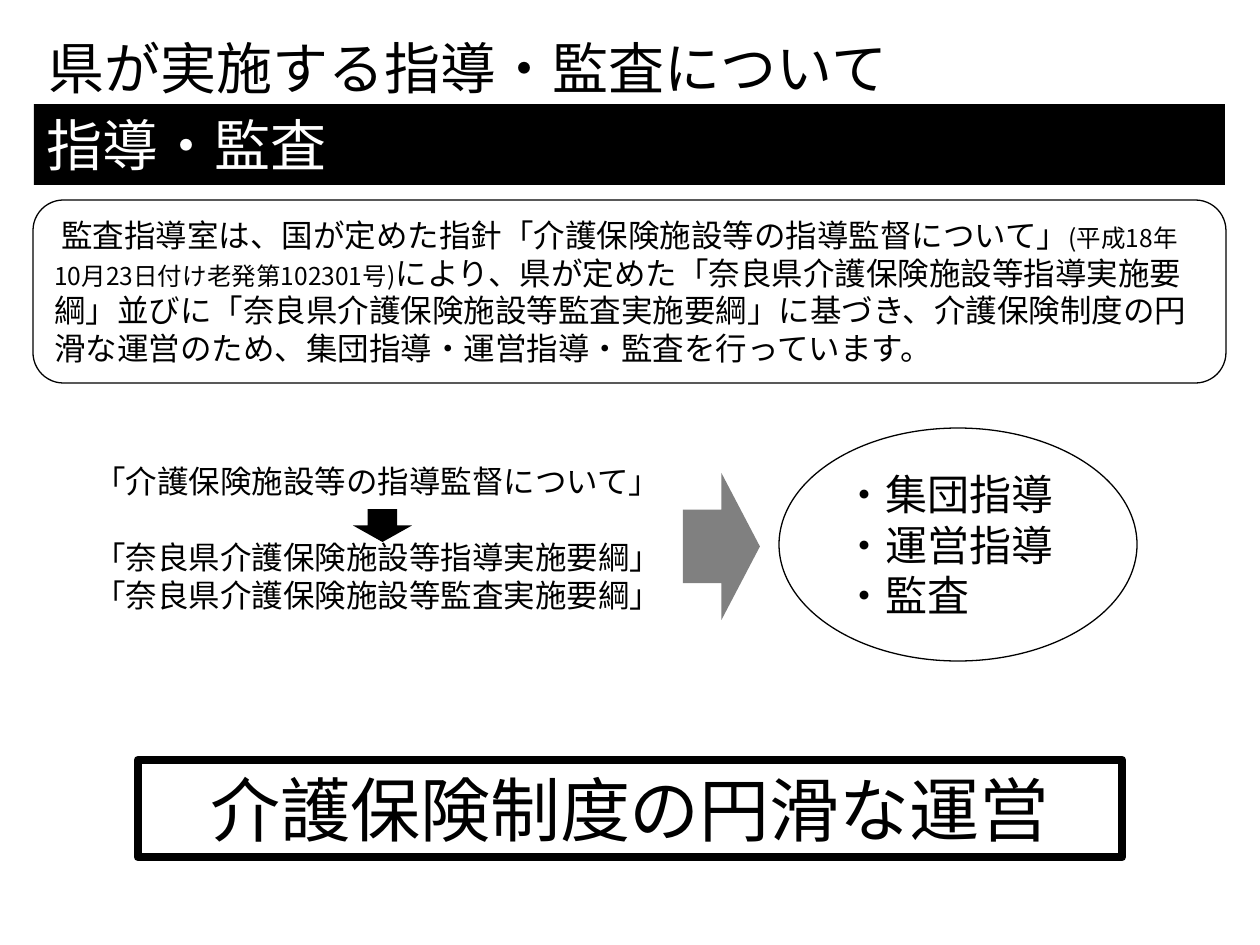
from lxml import etree
from pptx import Presentation
from pptx import util as u
from pptx.dml.color import RGBColor
from pptx.enum import shapes, text
from pptx.oxml.ns import qn

PX = u.Inches(1) / 126
FONT = "Noto Sans CJK JP"
BLACK, WHITE, GRAY = "000000", "FFFFFF", "808080"
KIND = shapes.MSO_SHAPE


def write(shape, lines, size, color=BLACK, anchor=text.MSO_ANCHOR.MIDDLE,
          align=text.PP_ALIGN.LEFT):
    """Fill a shape with paragraphs; each line is a list of (words, size) or a string."""
    frame = shape.text_frame
    frame.word_wrap = True
    frame.vertical_anchor = anchor
    for i, line in enumerate(lines):
        paragraph = frame.paragraphs[0] if i == 0 else frame.add_paragraph()
        paragraph.alignment = align
        for words, points in [(line, size)] if isinstance(line, str) else line:
            run = paragraph.add_run()
            run.text = words
            run.font.size = u.Pt(points)
            run.font.name = FONT
            run.font.color.rgb = RGBColor.from_string(color)
            etree.SubElement(run.font._element, qn("a:ea")).set("typeface", FONT)


def add_figure(kind, box, fill=None, line=None):
    """Add a preset shape; box is left, top, width, height in px, line is in points."""
    figure = slide.shapes.add_shape(kind, *(round(v * PX) for v in box))
    figure.shadow.inherit = False
    if fill:
        figure.fill.solid()
        figure.fill.fore_color.rgb = RGBColor.from_string(fill)
    else:
        figure.fill.background()
    if line:
        figure.line.color.rgb = RGBColor.from_string(BLACK)
        figure.line.width = u.Pt(line)
    else:
        figure.line.fill.background()
    return figure


prs = Presentation()
prs.slide_width, prs.slide_height = u.Inches(10), u.Inches(7.5)
slide = prs.slides.add_slide(prs.slide_layouts[5])

# Title
title = slide.shapes.title
title.left, title.top, title.width, title.height = (
    round(v * PX) for v in (36, 27, 1071, 80))
write(title, ["県が実施する指導・監査について"], 32)

# Section band
band = add_figure(KIND.RECTANGLE, (34, 104, 1191, 81), fill=BLACK)
write(band, ["指導・監査"], 32, WHITE)

# Explanation
explanation = add_figure(KIND.ROUNDED_RECTANGLE, (33, 200, 1193, 183), line=0.75)
write(explanation, [[
    (" 監査指導室は、国が定めた指針「介護保険施設等の指導監督について」", 18),
    ("(平成18年10月23日付け老発第102301号)", 14),
    ("により、県が定めた「奈良県介護保険施設等指導実施要綱」並びに"
     "「奈良県介護保険施設等監査実施要綱」に基づき、介護保険制度の円滑な運営のため、"
     "集団指導・運営指導・監査を行っています。", 18),
]], 18)

# Guideline and the prefectural rules that follow from it
rules = slide.shapes.add_textbox(*(round(v * PX) for v in (82, 456, 598, 165)))
write(rules, [
    "「介護保険施設等の指導監督について」",
    "「奈良県介護保険施設等指導実施要綱」",
    "「奈良県介護保険施設等監査実施要綱」",
], 18, anchor=text.MSO_ANCHOR.TOP)
rules.text_frame.paragraphs[1].space_before = u.Pt(21.6)

# Arrows: guideline to rules, rules to activities
add_figure(KIND.DOWN_ARROW, (353, 509, 59, 33), fill=BLACK)
add_figure(KIND.RIGHT_ARROW, (683, 473, 77, 147), fill=GRAY)

# Activities
activities = add_figure(KIND.OVAL, (779, 428, 358, 233), line=0.75)
write(activities, ["・集団指導", "・運営指導", "・監査"], 24)

# Goal
goal = add_figure(KIND.RECTANGLE, (138, 760, 984, 97), line=5)
write(goal, ["介護保険制度の円滑な運営"], 40, align=text.PP_ALIGN.CENTER)

prs.save("out.pptx")
